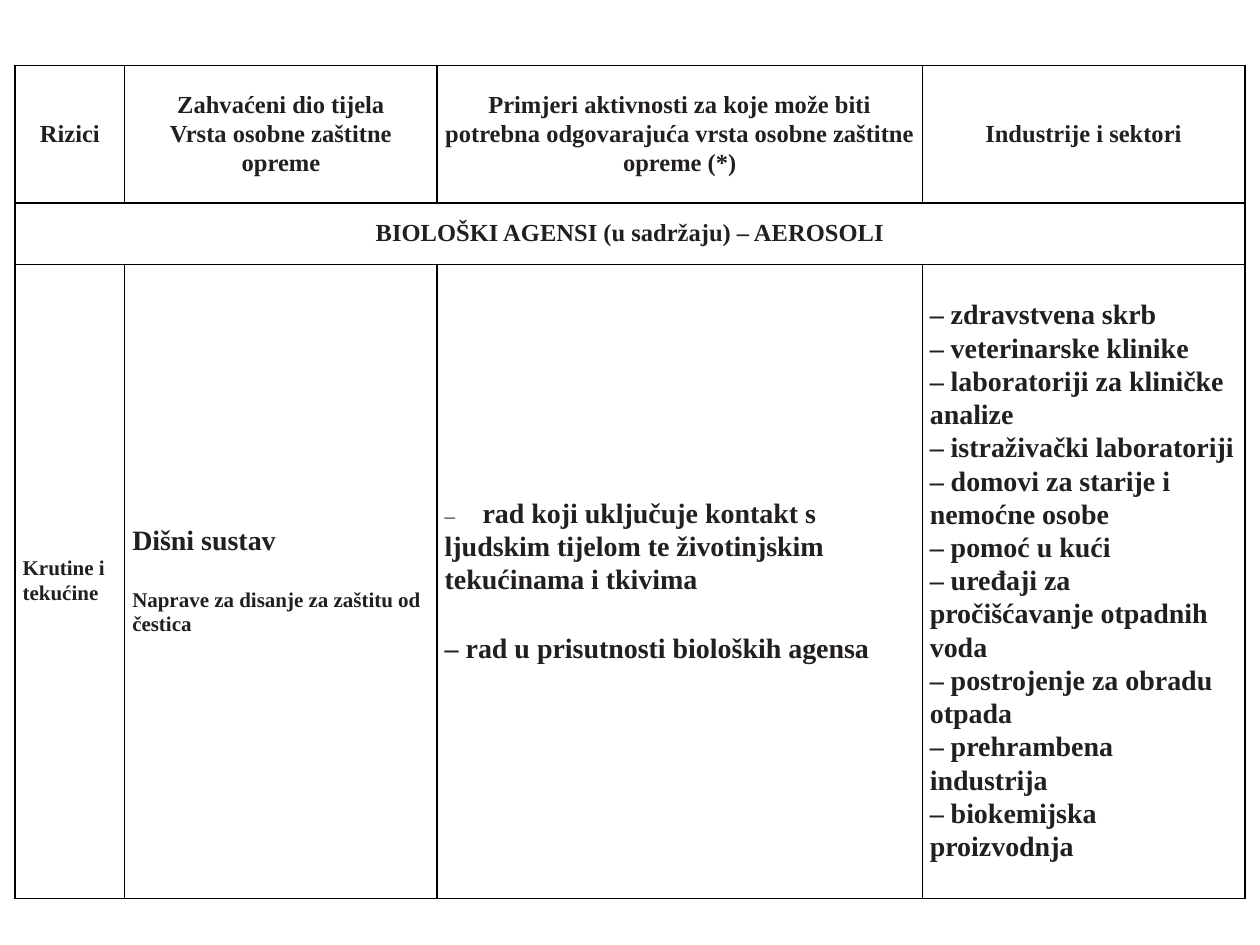
import pptx
import pptx.util
import pptx.dml.color
import pptx.enum.text
import lxml.etree
from pptx.oxml.ns import qn

INK = pptx.dml.color.RGBColor(0x23, 0x1F, 0x20)
WHITE = pptx.dml.color.RGBColor(0xFF, 0xFF, 0xFF)
BLACK = pptx.dml.color.RGBColor(0, 0, 0)
Inches = pptx.util.Inches
Pt = pptx.util.Pt
CENTER = pptx.enum.text.PP_ALIGN.CENTER
LEFT = pptx.enum.text.PP_ALIGN.LEFT


def style_font(font, size, bold=True):
    font.name = "Times New Roman"
    font.size = Pt(size)
    font.bold = bold
    font.color.rgb = INK


def draw_borders(cell):
    properties = cell._tc.get_or_add_tcPr()
    for side in ("a:lnL", "a:lnR", "a:lnT", "a:lnB"):
        line = lxml.etree.SubElement(properties, qn(side), w=str(Pt(1)))
        fill = lxml.etree.SubElement(line, qn("a:solidFill"))
        lxml.etree.SubElement(fill, qn("a:srgbClr"), val=str(BLACK))


column_widths = [0.87, 2.48, 3.85, 2.56]
row_heights = [1.09, 0.49, 5.03]

header = [
    [("Rizici", 14, 0)],
    [("Zahvaćeni dio tijela", 14, 0), ("Vrsta osobne zaštitne opreme", 14, 0)],
    [("Primjeri aktivnosti za koje može biti potrebna odgovarajuća "
      "vrsta osobne zaštitne opreme (*)", 14, 0)],
    [("Industrije i sektori", 14, 0)],
]
agents = [[("BIOLOŠKI AGENSI (u sadržaju) – AEROSOLI", 14, 0)], [], [], []]
sectors = [
    "zdravstvena skrb",
    "veterinarske klinike",
    "laboratoriji za kliničke analize",
    "istraživački laboratoriji",
    "domovi za starije i nemoćne osobe",
    "pomoć u kući",
    "uređaji za pročišćavanje otpadnih voda",
    "postrojenje za obradu otpada",
    "prehrambena industrija",
    "biokemijska proizvodnja",
]
solids_and_liquids = [
    [("Krutine i tekućine", 12, 0)],
    [("Dišni sustav", 16, 0), ("Naprave za disanje za zaštitu od čestica", 12, 17)],
    [("", 16, 0), ("– rad u prisutnosti bioloških agensa", 16, 20)],
    [(f"– {sector}", 16, 0) for sector in sectors],
]

presentation = pptx.Presentation()
presentation.slide_width = Inches(10)
presentation.slide_height = Inches(7.5)
slide = presentation.slides.add_slide(presentation.slide_layouts[6])

risks = slide.shapes.add_table(
    len(row_heights), len(column_widths), Inches(0.12), Inches(0.52),
    Inches(sum(column_widths)), Inches(sum(row_heights))).table
risks.first_row = False
risks.horz_banding = False
for column, width in zip(risks.columns, column_widths):
    column.width = Inches(width)
for row, height in zip(risks.rows, row_heights):
    row.height = Inches(height)
risks.cell(1, 0).merge(risks.cell(1, 3))

for row_index, row_texts in enumerate([header, agents, solids_and_liquids]):
    for column_index, lines in enumerate(row_texts):
        cell = risks.cell(row_index, column_index)
        cell.margin_left = cell.margin_right = cell.margin_top = Inches(0.06)
        cell.margin_bottom = Inches(0.08)
        cell.vertical_anchor = pptx.enum.text.MSO_ANCHOR.MIDDLE
        draw_borders(cell)
        cell.fill.solid()
        cell.fill.fore_color.rgb = WHITE
        for line_index, (text, size, gap) in enumerate(lines):
            frame = cell.text_frame
            paragraph = frame.add_paragraph() if line_index else frame.paragraphs[0]
            paragraph.text = text
            paragraph.alignment = LEFT if row_index == 2 else CENTER
            paragraph.line_spacing = 1.07
            paragraph.space_before = Pt(gap)
            if text:
                style_font(paragraph.font, size)

contact_work = risks.cell(2, 2).text_frame.paragraphs[0]
tab_stops = lxml.etree.SubElement(contact_work._p.get_or_add_pPr(), qn("a:tabLst"))
lxml.etree.SubElement(tab_stops, qn("a:tab"), pos=str(Inches(0.3)), algn="l")
for text, size, bold in [
    ("–\t", 12, False),
    ("rad koji uključuje kontakt s ljudskim tijelom te životinjskim "
     "tekućinama i tkivima", 16, True),
]:
    run = contact_work.add_run()
    run.text = text
    style_font(run.font, size, bold)

presentation.save("out.pptx")
